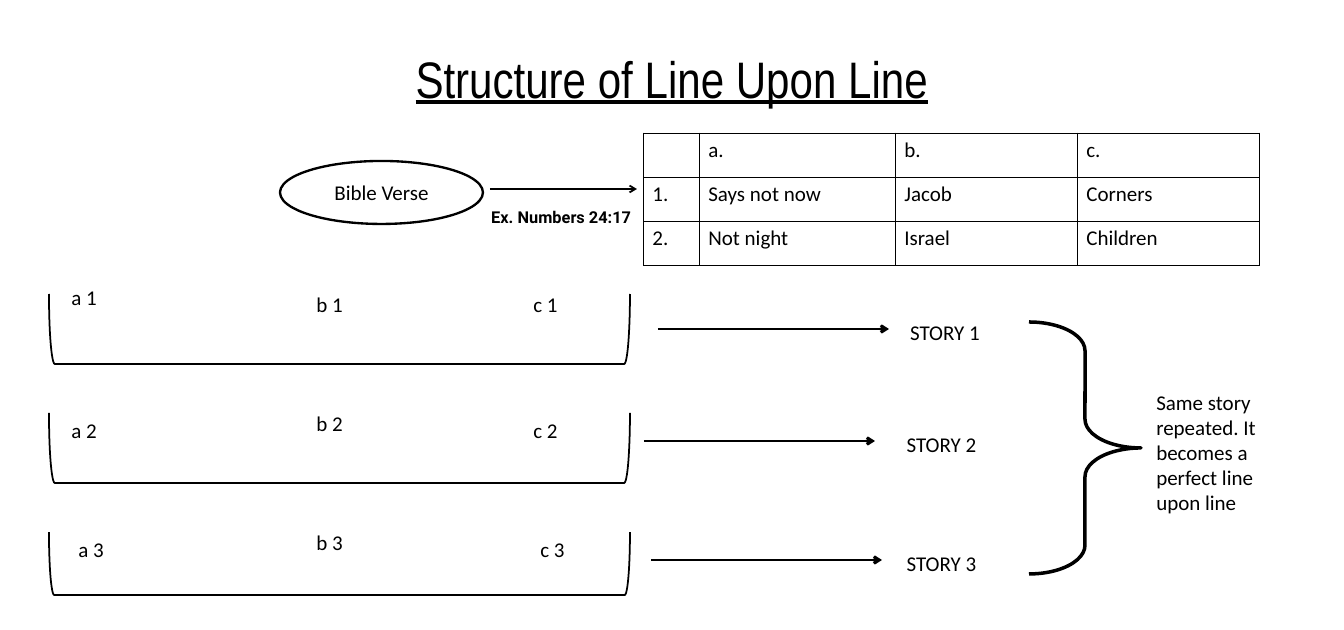
from dataclasses import dataclass
from pptx import Presentation
from pptx.dml.color import RGBColor as RGB
from pptx.enum.shapes import MSO_CONNECTOR as Link, MSO_SHAPE as Form
from pptx.enum.text import MSO_ANCHOR as Anchor, MSO_AUTO_SIZE as Fit, PP_ALIGN as Align
from pptx.oxml.ns import qn
from pptx.util import Inches, Pt
from lxml.etree import SubElement as Sub


@dataclass(frozen=True)
class Theme:
    ink: str = "000000"
    head: str = "Arial Narrow"
    body: str = "Calibri"
    note: str = "Roboto"
    big: int = 44
    mid: int = 18
    small: int = 14


T = Theme()
INK = RGB.from_string(T.ink)
TABLE = [["", "a.", "b.", "c."],
         ["1.", "Says not now", "Jacob", "Corners"],
         ["2.", "Not night", "Israel", "Children"]]

# Each row: bracket top and depth, label (x, y) pairs, arrow (x, y), story (x, y, width)
ROWS = [(42, 10, [(9, 40), (44, 41), (75, 41)], (94, 47), (128, 45, 14)),
        (59, 10, [(9, 59), (44, 58), (75, 59)], (92, 63), (127, 61, 15)),
        (76, 9, [(10, 76), (44, 75), (76, 76)], (93, 80), (128, 78, 13))]


def unit(n):
    """Grid step: twelve to the inch."""
    return Inches(n / 12)


def write(frame, text, size=T.mid, font=T.body, align=Align.LEFT, bold=False, line=False):
    par = frame.paragraphs[0]
    par.alignment = align
    run = par.add_run()
    run.text = text
    face = run.font
    face.size, face.name, face.bold, face.underline = Pt(size), font, bold, line
    face.color.rgb = INK


def label(slide, text, x, y, wide, high=4.8, **form):
    frame = slide.shapes.add_textbox(*map(unit, (x, y, wide, high))).text_frame
    frame.word_wrap = True
    frame.auto_size = Fit.SHAPE_TO_FIT_TEXT
    write(frame, text, **form)


def shape(slide, kind, x, y, wide, high, width):
    item = slide.shapes.add_shape(kind, *map(unit, (x, y, wide, high)))
    item.shadow.inherit = False
    item.fill.background()
    item.line.color.rgb = INK
    item.line.width = Pt(width)
    return item


def tray(slide, y, deep, x=7, wide=83):
    """Bracket turned to open upward; placed by its turned outline."""
    off = (wide - deep) / 2
    shape(slide, Form.LEFT_BRACKET, x + off, y - off, deep, wide, 1.5).rotation = 270


def arrow(slide, x, y, wide, width):
    item = slide.shapes.add_connector(Link.STRAIGHT, *map(unit, (x, y, x + wide, y)))
    item.line.color.rgb = INK
    item.line.width = Pt(width)
    Sub(item.line._get_or_add_ln(), qn("a:tailEnd"), type="arrow")
    Sub(item._element.spPr, qn("a:effectLst"))


def border(cell):
    props = cell._tc.get_or_add_tcPr()
    for side in ("lnL", "lnR", "lnT", "lnB"):
        edge = Sub(props, qn("a:" + side), w=str(Pt(1)))
        Sub(Sub(edge, qn("a:solidFill")), qn("a:srgbClr"), val=T.ink)


def grid(slide, data, x, y, cols, high):
    size = map(unit, (x, y, sum(cols), high * len(data)))
    table = slide.shapes.add_table(len(data), len(cols), *size).table
    table.first_row = table.horz_banding = False
    for col, wide in zip(table.columns, cols):
        col.width = unit(wide)
    for row, texts in zip(table.rows, data):
        row.height = unit(high)
        for cell, text in zip(row.cells, texts):
            border(cell)
            cell.fill.background()
            if text:
                write(cell.text_frame, text)


def title(slide, text):
    item = slide.shapes.title
    item.left, item.top, item.width, item.height = map(Inches, (0.8, 0.3, 14.4, 1.25))
    frame = item.text_frame
    frame.auto_size = Fit.NONE
    frame.vertical_anchor = Anchor.MIDDLE
    write(frame, text, size=T.big, font=T.head, align=Align.CENTER, line=True)


def main():
    deck = Presentation()
    deck.slide_width, deck.slide_height = Inches(16), Inches(7.5)
    slide = deck.slides.add_slide(deck.slide_layouts[5])
    title(slide, "Structure of Line Upon Line")

    # Verse and its table of lines
    shape(slide, Form.OVAL, 40, 23, 29, 9, 2)
    label(slide, "Bible Verse", 45.5, 25, 18, align=Align.CENTER)
    arrow(slide, 70, 27, 21, 1.5)
    label(slide, "Ex. Numbers 24:17", 69, 29, 24, 4, size=T.small, font=T.note, bold=True)
    grid(slide, TABLE, 92, 19, (8, 28, 26, 26), 19 / 3)

    # Three lines, each leading to a story
    for num, (top, deep, spots, start, (x, y, wide)) in enumerate(ROWS, 1):
        tray(slide, top, deep)
        for name, spot in zip("abc", spots):
            label(slide, f"{name} {num}", *spot, 10)
        arrow(slide, *start, 33, 2.25)
        label(slide, f"STORY {num}", x, y, wide, align=Align.CENTER)

    # Conclusion
    brace = shape(slide, Form.RIGHT_BRACE, 147, 46, 16, 36, 3)
    brace.adjustments[0], brace.adjustments[1] = 0.257, 0.5
    label(slide, "Same story repeated. It becomes a perfect line upon line", 164, 55, 20, 19.4)

    deck.save("out.pptx")


if __name__ == "__main__":
    main()
